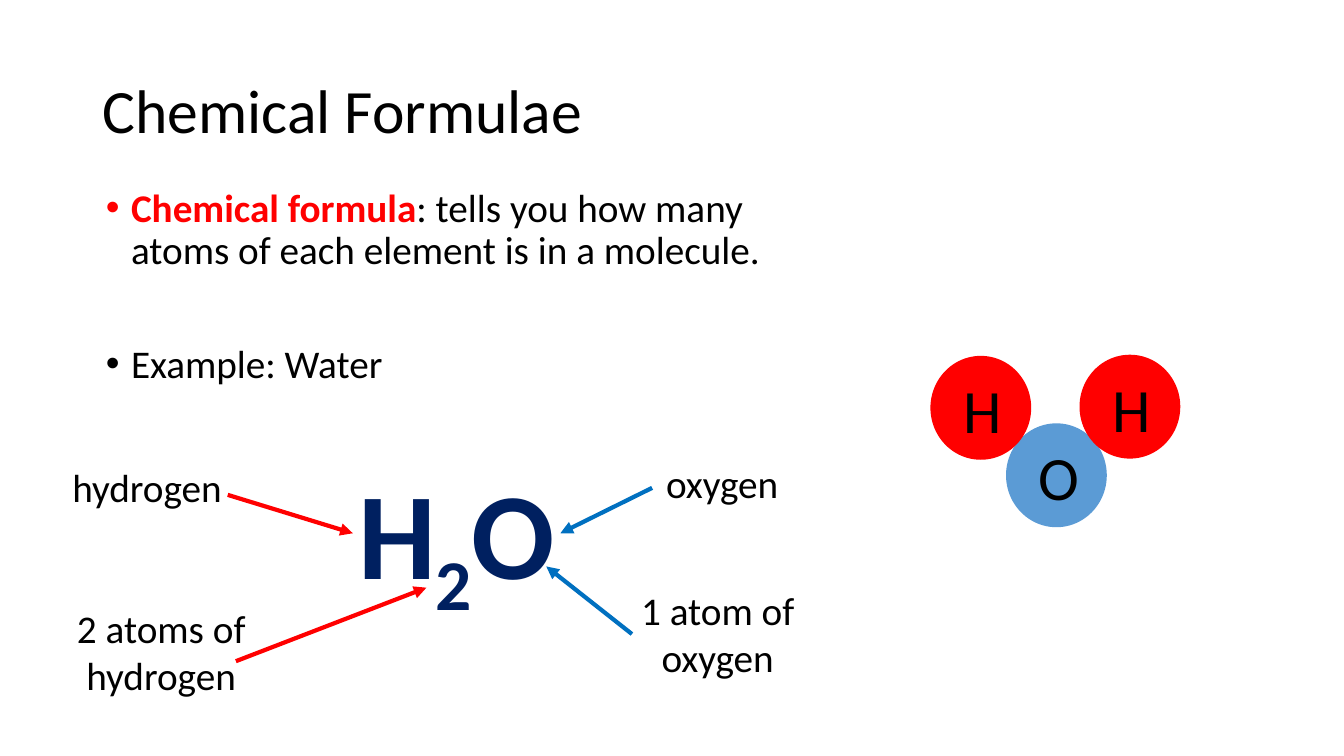
from lxml import etree
from pptx import Presentation
from pptx.dml.color import RGBColor
from pptx.enum.shapes import MSO_CONNECTOR, MSO_SHAPE
from pptx.enum.text import MSO_ANCHOR, MSO_AUTO_SIZE, PP_ALIGN
from pptx.oxml.ns import qn
from pptx.util import Pt

BLACK = RGBColor(0x00, 0x00, 0x00)
RED = RGBColor(0xFF, 0x00, 0x00)
BLUE = RGBColor(0x00, 0x70, 0xC0)
SKY = RGBColor(0x5B, 0x9B, 0xD5)
NAVY = RGBColor(0x00, 0x20, 0x60)
LEFT, CENTER = PP_ALIGN.LEFT, PP_ALIGN.CENTER
MIDDLE, TOP = MSO_ANCHOR.MIDDLE, MSO_ANCHOR.TOP
FONT = "Calibri"

TITLE = "Chemical Formulae"
TITLE_AREA = (66.2, 28.8, 828, 104.4)
BODY_AREA = (68.4, 131, 515.5, 342.7)
DEFINITION = [
    ("Chemical formula", {"color": RED, "bold": True}),
    (": tells you how many atoms of each element is in a molecule.", {}),
]
EXAMPLE = [("Example: Water", {})]
FORMULA_STYLE = {"size": 88, "color": NAVY, "bold": True}
FORMULA = [
    ("H", FORMULA_STYLE),
    ("2", {**FORMULA_STYLE, "baseline": -25000}),
    ("O", FORMULA_STYLE),
]
# runs, bulleted, space before
BODY = [(DEFINITION, True, 10), (EXAMPLE, True, 51), (FORMULA, False, 51)]

# symbol, fill, left, top
ATOMS = [
    ("O", SKY, 718.6, 302.4),
    ("H", RED, 771.1, 253.4),
    ("H", RED, 664.6, 254.2),
]
ATOM_SIZE = (72, 74.2)
SYMBOL_OFFSET = (16.2, 7.7)
SYMBOL_SIZE = (75.6, 60.5)

# text, left, top, height, alignment
LABELS = [
    ("hydrogen", 44.6, 327.6, 41, LEFT),
    ("2 atoms of hydrogen", 44.6, 428.4, 74.9, CENTER),
    ("oxygen", 468.7, 324.7, 41, LEFT),
    ("1 atom of oxygen", 442.1, 415.4, 74.9, CENTER),
]
LABEL_WIDTH = 141.1

# colour, start x, start y, tip x, tip y
ARROWS = [
    (RED, 162.7, 353.5, 252, 380.9),
    (RED, 168.5, 472.3, 304.6, 419.8),
    (BLUE, 465.8, 348.5, 400.3, 380.9),
    (BLUE, 451.4, 452.9, 390.2, 404.6),
]


def add_span(para, text, size=28, color=BLACK, bold=False, baseline=0):
    span = para.add_run()
    span.text = text
    font = span.font
    font.name, font.size, font.bold = FONT, Pt(size), bold
    font.color.rgb = color
    if baseline:
        font._element.set("baseline", str(baseline))


def place(shape, area, anchor):
    shape.left, shape.top, shape.width, shape.height = map(Pt, area)
    frame = shape.text_frame
    frame.word_wrap = True
    frame.auto_size = MSO_AUTO_SIZE.NONE
    frame.vertical_anchor = anchor
    return frame


def set_bullet(para, bulleted):
    """Give the paragraph a hanging bullet, or clear bullet and indent."""
    props = para._p.get_or_add_pPr()
    indent = Pt(18) if bulleted else 0
    props.set("marL", str(indent))
    props.set("indent", str(-indent))
    if bulleted:
        etree.SubElement(props, qn("a:buFont")).set("typeface", "Arial")
        etree.SubElement(props, qn("a:buChar")).set("char", "•")
    else:
        etree.SubElement(props, qn("a:buNone"))


def add_label(slide, text, area, align=LEFT, size=28):
    box = slide.shapes.add_textbox(*map(Pt, area))
    para = place(box, area, TOP).paragraphs[0]
    para.alignment = align
    add_span(para, text, size=size)


def add_arrow(slide, color, *ends):
    arrow = slide.shapes.add_connector(MSO_CONNECTOR.STRAIGHT, *map(Pt, ends))
    arrow.line.color.rgb = color
    arrow.line.width = Pt(3)
    line = arrow.line._get_or_add_ln()
    etree.SubElement(line, qn("a:tailEnd")).set("type", "triangle")
    etree.SubElement(arrow._element.spPr, qn("a:effectLst"))


def fill_placeholders(slide):
    title = place(slide.shapes.title, TITLE_AREA, MIDDLE).paragraphs[0]
    title.alignment = LEFT
    title.line_spacing = 0.9
    add_span(title, TITLE, size=44)

    frame = place(slide.placeholders[1], BODY_AREA, TOP)
    for index, (spans, bulleted, gap) in enumerate(BODY):
        para = frame.add_paragraph() if index else frame.paragraphs[0]
        para.alignment = LEFT if bulleted else CENTER
        para.line_spacing = 0.9
        para.space_before = Pt(gap)
        set_bullet(para, bulleted)
        for text, style in spans:
            add_span(para, text, **style)


def draw_molecule(slide):
    for _, color, left, top in ATOMS:
        atom = slide.shapes.add_shape(
            MSO_SHAPE.OVAL, *map(Pt, (left, top, *ATOM_SIZE)))
        atom.shadow.inherit = False
        atom.fill.solid()
        atom.fill.fore_color.rgb = color
        atom.line.fill.background()
    for symbol, _, left, top in ATOMS:
        area = (left + SYMBOL_OFFSET[0], top + SYMBOL_OFFSET[1], *SYMBOL_SIZE)
        add_label(slide, symbol, area, size=44)


def main():
    deck = Presentation()
    deck.slide_width, deck.slide_height = Pt(960), Pt(540)
    slide = deck.slides.add_slide(deck.slide_layouts[1])
    fill_placeholders(slide)
    draw_molecule(slide)
    for text, left, top, height, align in LABELS:
        add_label(slide, text, (left, top, LABEL_WIDTH, height), align)
    for arrow in ARROWS:
        add_arrow(slide, *arrow)
    deck.save("out.pptx")


if __name__ == "__main__":
    main()
